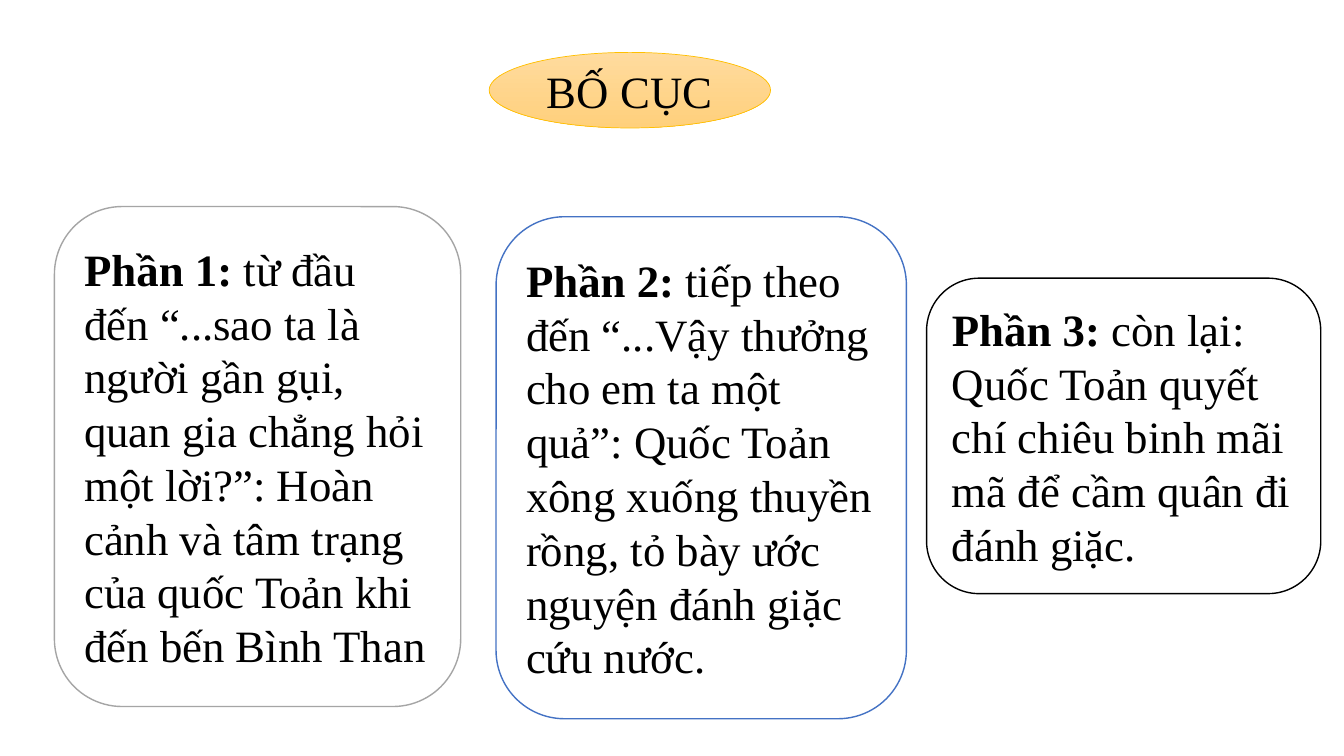
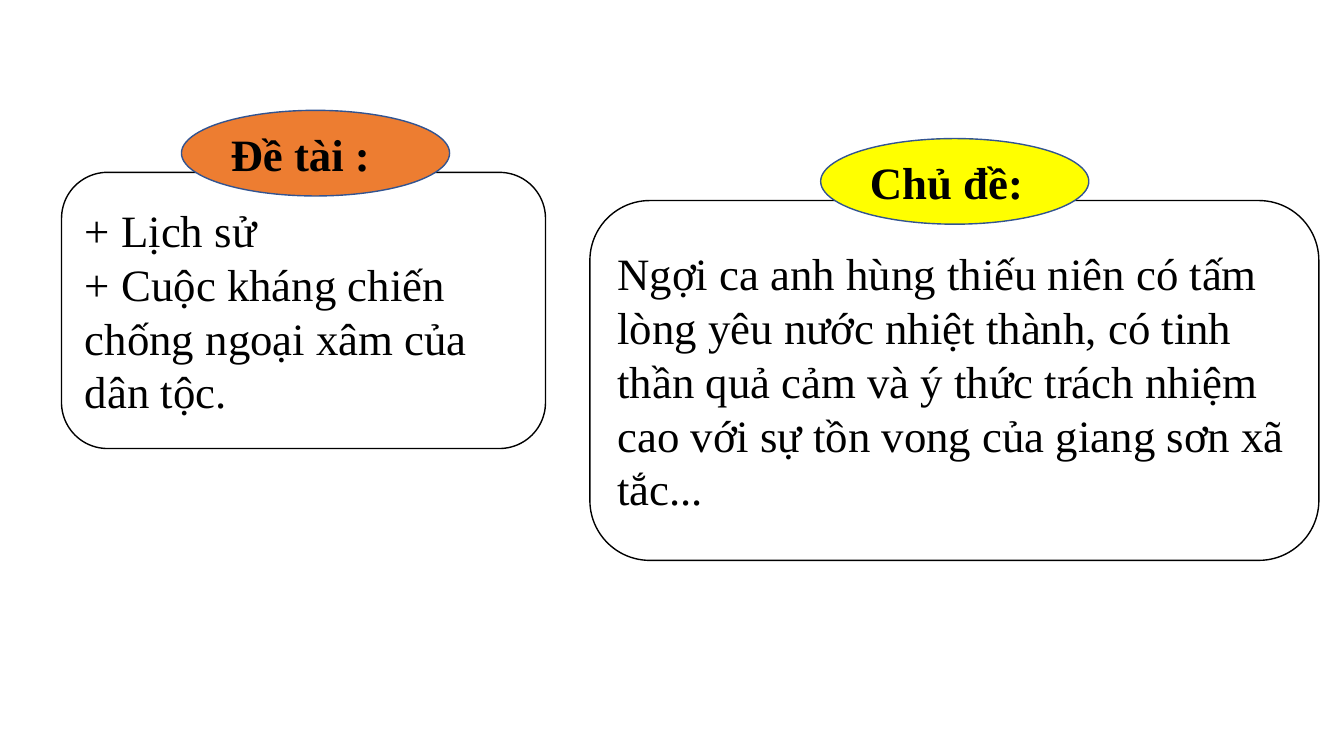
from dataclasses import dataclass

from pptx import Presentation
from pptx.dml.color import RGBColor
from pptx.enum.shapes import MSO_SHAPE
from pptx.enum.text import MSO_ANCHOR, MSO_AUTO_SIZE, PP_ALIGN
from pptx.util import Inches, Pt

OVAL = MSO_SHAPE.OVAL
ROUNDED = MSO_SHAPE.ROUNDED_RECTANGLE
MIDDLE = MSO_ANCHOR.MIDDLE
NO_FIT = MSO_AUTO_SIZE.NONE
LEFT, CENTER = PP_ALIGN.LEFT, PP_ALIGN.CENTER

COLORS = {
    "text": "000000",
    "card": "FFFFFF",
    "gray": "A5A5A5",
    "blue": "4472C4",
    "black": "000000",
    "gold": "FFC000",
    "gold_top": "FFDB9E",
    "gold_bottom": "FFD07C",
    "orange": "ED7D31",
    "yellow": "FFFF00",
    "navy": "325491",
}
FONT = "Times New Roman"
TEXT_SIZE = 32
WIDTH, HEIGHT = Inches(13.33), Inches(7.5)
TITLE_ONLY, BLANK = 5, 6
LABEL_WIDTH, LABEL_HEIGHT, LABEL_RISE = 19.95, 11.33, 8.2


@dataclass(frozen=True)
class Box:
    """Position and size in percent of the slide."""

    x: float
    y: float
    w: float
    h: float

    def emu(self) -> tuple[int, int, int, int]:
        return (
            int(WIDTH * self.x / 100),
            int(HEIGHT * self.y / 100),
            int(WIDTH * self.w / 100),
            int(HEIGHT * self.h / 100),
        )


@dataclass(frozen=True)
class Run:
    text: str
    bold: bool = False


@dataclass(frozen=True)
class Part:
    box: Box
    line: str
    heading: str
    body: str


@dataclass(frozen=True)
class Topic:
    box: Box
    label: str
    label_x: float
    label_fill: str
    lines: tuple[str, ...]

    def label_box(self) -> Box:
        return Box(self.label_x, self.box.y - LABEL_RISE, LABEL_WIDTH, LABEL_HEIGHT)


TITLE_BOX = Box(36.4, 6.93, 20.93, 10)

PARTS = (
    Part(
        Box(4.05, 27.33, 30.23, 66.13), "gray", "Phần 1: ",
        "từ đầu đến “...sao ta là người gần gụi, quan gia chẳng hỏi một lời?”: "
        "Hoàn cảnh và tâm trạng của quốc Toản khi đến bến Bình Than",
    ),
    Part(
        Box(36.91, 28.67, 30.53, 66.4), "blue", "Phần 2:",
        " tiếp theo đến “...Vậy thưởng cho em ta một quả”: Quốc Toản xông xuống "
        "thuyền rồng, tỏ bày ước nguyện đánh giặc cứu nước.",
    ),
    Part(
        Box(68.94, 36.8, 29.33, 41.73), "black", "Phần 3:",
        " còn lại: Quốc Toản quyết chí chiêu binh mãi mã để cầm quân đi đánh giặc.",
    ),
)

TOPICS = (
    Topic(
        Box(4.58, 22.8, 36.01, 36.53), "Đề tài :", 13.5, "orange",
        ("+ Lịch sử", "+ Cuộc kháng chiến chống ngoại xâm của dân tộc."),
    ),
    Topic(
        Box(43.89, 26.53, 54.24, 47.6), "Chủ đề:", 61.06, "yellow",
        ("Ngợi ca anh hùng thiếu niên có tấm lòng yêu nước nhiệt thành, có tinh "
         "thần quả cảm và ý thức trách nhiệm cao với sự tồn vong của giang sơn "
         "xã tắc...",),
    ),
)


def rgb(name: str) -> RGBColor:
    return RGBColor.from_string(COLORS[name])


def write(sp, paragraphs: list[list[Run]], align=LEFT) -> None:
    tf = sp.text_frame
    tf.word_wrap = True
    tf.auto_size = NO_FIT
    tf.vertical_anchor = MIDDLE
    for i, runs in enumerate(paragraphs):
        p = tf.paragraphs[0] if i == 0 else tf.add_paragraph()
        p.alignment = align
        for run in runs:
            r = p.add_run()
            r.text = run.text
            r.font.name = FONT
            r.font.size = Pt(TEXT_SIZE)
            r.font.bold = run.bold
            r.font.color.rgb = rgb("text")


def add_outline(s, kind, box: Box, fill: str, line: str, weight: float = 1):
    sp = s.shapes.add_shape(kind, *box.emu())
    sp.shadow.inherit = False
    sp.fill.solid()
    sp.fill.fore_color.rgb = rgb(fill)
    sp.line.color.rgb = rgb(line)
    sp.line.width = Pt(weight)
    return sp


def add_title(s, text: str) -> None:
    oval = add_outline(s, OVAL, TITLE_BOX, "gold_top", "gold", 0.5)
    oval.fill.gradient()
    oval.fill.gradient_angle = 270
    for stop, name in zip(oval.fill.gradient_stops, ("gold_top", "gold_bottom")):
        stop.color.rgb = rgb(name)
    title = s.shapes.title
    title.left, title.top, title.width, title.height = TITLE_BOX.emu()
    write(title, [[Run(text)]], CENTER)
    oval._element.addnext(title._element)


def add_part(s, part: Part) -> None:
    sp = add_outline(s, ROUNDED, part.box, "card", part.line)
    write(sp, [[Run(part.heading, True), Run(part.body)]])


def add_topic(s, topic: Topic) -> None:
    card = add_outline(s, ROUNDED, topic.box, "card", "black")
    write(card, [[Run(line)] for line in topic.lines])
    label = add_outline(s, OVAL, topic.label_box(), topic.label_fill, "navy")
    write(label, [[Run(topic.label, True)]])


def main() -> None:
    prs = Presentation()
    prs.slide_width, prs.slide_height = WIDTH, HEIGHT

    s = prs.slides.add_slide(prs.slide_layouts[TITLE_ONLY])
    add_title(s, "BỐ CỤC")
    for part in PARTS:
        add_part(s, part)

    s = prs.slides.add_slide(prs.slide_layouts[BLANK])
    for topic in TOPICS:
        add_topic(s, topic)

    prs.save("out.pptx")


if __name__ == "__main__":
    main()
